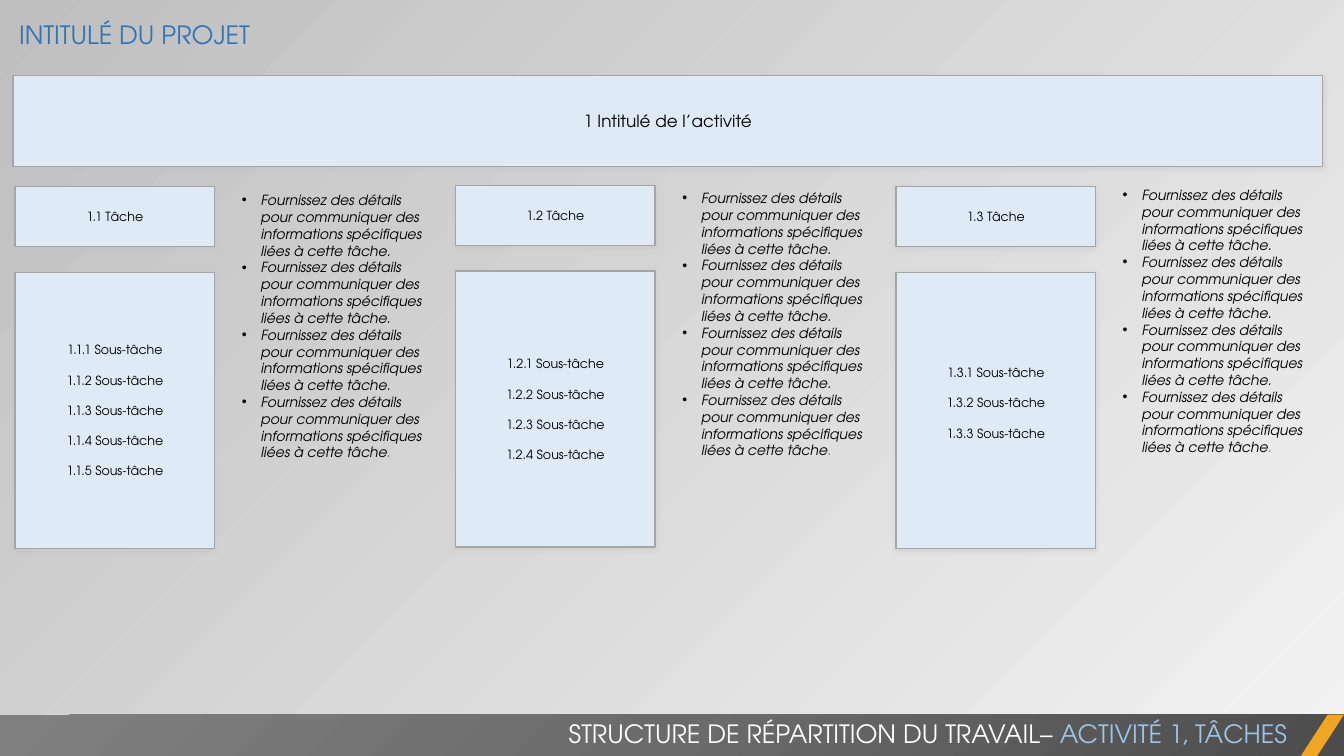
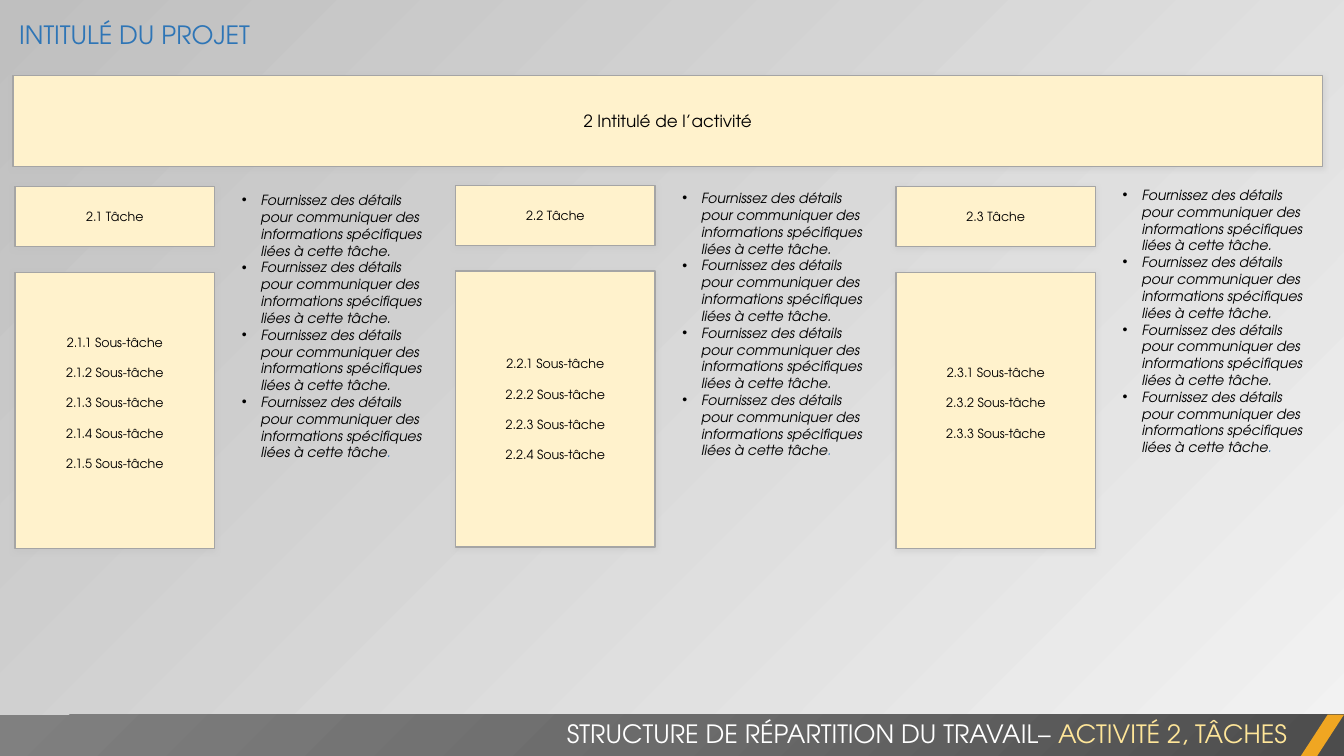
from pptx import Presentation
from pptx.dml.color import RGBColor
from pptx.enum.shapes import MSO_SHAPE as Shape
from pptx.enum.text import MSO_ANCHOR as Anchor, MSO_AUTO_SIZE as AutoSize, PP_ALIGN as Align
from pptx.oxml import parse_xml
from pptx.oxml.ns import nsdecls
from pptx.util import Cm, Pt

FONT = "TeX Gyre Adventor"
BLACK = RGBColor(0x00, 0x00, 0x00)
WHITE = RGBColor(0xFF, 0xFF, 0xFF)
BLUE = RGBColor(0x2E, 0x75, 0xB6)
SKY = RGBColor(0x9D, 0xC3, 0xE6)
PALE_BLUE = RGBColor(0xDE, 0xEB, 0xF7)
GOLD = RGBColor(0xFF, 0xE6, 0x99)
PALE_YELLOW = RGBColor(0xFF, 0xF2, 0xCC)
ORANGE = RGBColor(0xF0, 0xA6, 0x22)
BORDER = RGBColor(0xA5, 0xA5, 0xA5)
SILVER = RGBColor(0xBF, 0xBF, 0xBF)
MIST = RGBColor(0xF2, 0xF2, 0xF2)
BAND_DARK = RGBColor(0x4C, 0x4C, 0x4C)
BAND_MID = RGBColor(0x6B, 0x6B, 0x6B)
BAND_LIGHT = RGBColor(0x80, 0x80, 0x80)

PAGE_WIDTH, PAGE_HEIGHT = 33.87, 19.05
BAND_TOP, BAND_HEIGHT = 18.01, 1.06
COLUMN_LEFT, COLUMN_STEP = 0.38, 11.1
BOX_WIDTH, TASK_HEIGHT, SUBTASK_HEIGHT = 5.03, 1.52, 6.96
SUBTASK_DROP, DETAIL_SHIFT = 2.16, 5.46
TASK_TOPS = (4.7, 4.67, 4.7)
DETAIL_TOPS = (4.7, 4.65, 4.57)
DETAIL_IDS = (2, 3, 4)
HEADING_ID = 1
LINE_GAP = Pt(10.8)
DETAIL = "Fournissez des détails pour communiquer des informations spécifiques liées à cette tâche"

ACTIVITIES = (
    (PALE_BLUE, SKY, ((5, False), (4, False), (3, True))),
    (PALE_YELLOW, GOLD, ((5, True), (4, False), (3, True))),
)


def set_gradient(owner, stops, direction):
    marks = "".join(
        f'<a:gs pos="{place * 1000}"><a:srgbClr val="{color}">'
        f'<a:alpha val="{alpha * 1000}"/></a:srgbClr></a:gs>'
        for place, color, alpha in stops
    )
    gradient = owner.element.xpath(".//a:gradFill")[0]
    gradient.getparent().replace(gradient, parse_xml(
        f'<a:gradFill {nsdecls("a")} rotWithShape="1">'
        f"<a:gsLst>{marks}</a:gsLst>{direction}</a:gradFill>"
    ))


class WorkBreakdown:
    def __init__(self):
        self.deck = Presentation()
        self.deck.slide_width = Cm(PAGE_WIDTH)
        self.deck.slide_height = Cm(PAGE_HEIGHT)
        self.layout = self.deck.slide_layouts.get_by_name("Comparison")
        self.page = None

    def add_page(self):
        self.page = self.deck.slides.add_slide(self.layout)

    def add_frame(self):
        self.layout.background.fill.gradient()
        set_gradient(self.layout, ((0, MIST, 40), (100, SILVER, 100)),
                     '<a:lin ang="13500000" scaled="0"/>')
        band = self.block(Shape.RECTANGLE, 0, BAND_TOP, PAGE_WIDTH, BAND_HEIGHT)
        band.fill.gradient()
        set_gradient(band, ((0, BAND_DARK, 100), (50, BAND_MID, 100), (100, BAND_LIGHT, 100)),
                     '<a:path path="circle"><a:fillToRect l="100000" t="100000"/></a:path>')
        accent = self.block(Shape.PARALLELOGRAM, 32.77, BAND_TOP, 1.1, BAND_HEIGHT, ORANGE)
        accent.adjustments[0] = 0.65
        for number, part in enumerate((band, accent), 101):
            part.element.nvSpPr.cNvPr.set("id", str(number))
            self.layout.shapes.element.append(part.element)

    def block(self, kind, left, top, width, height, color=None):
        shape = self.page.shapes.add_shape(kind, Cm(left), Cm(top), Cm(width), Cm(height))
        shape.shadow.inherit = False
        shape.line.fill.background()
        if color is not None:
            shape.fill.solid()
            shape.fill.fore_color.rgb = color
        return shape

    def add_span(self, para, text, size, color=BLACK, italic=False):
        span = para.add_run()
        span.text = text
        span.font.name = FONT
        span.font.size = Pt(size)
        span.font.bold = False
        span.font.italic = italic
        span.font.color.rgb = color

    def box(self, left, top, width, height, color, lines, size, raised=False):
        box = self.block(Shape.RECTANGLE, left, top, width, height, color)
        box.line.color.rgb = BORDER
        box.line.width = Pt(1)
        box.element.xpath(".//a:effectLst")[0].append(parse_xml(
            f'<a:outerShdw {nsdecls("a")} blurRad="{Pt(4)}" dist="{Pt(1)}" dir="5400000">'
            f'<a:srgbClr val="{SILVER}"><a:alpha val="40000"/></a:srgbClr></a:outerShdw>'
        ))
        frame = box.text_frame
        frame.word_wrap = True
        frame.vertical_anchor = Anchor.MIDDLE
        if raised:
            frame.margin_bottom += LINE_GAP
        for index, line in enumerate(lines):
            para = frame.add_paragraph() if index else frame.paragraphs[0]
            para.alignment = Align.CENTER
            para.space_before = LINE_GAP if index else Pt(0)
            self.add_span(para, line, size)

    def placeholder(self, key, left, top, width, height):
        holder = self.page.placeholders[key]
        holder.left, holder.top = Cm(left), Cm(top)
        holder.width, holder.height = Cm(width), Cm(height)
        frame = holder.text_frame
        frame.word_wrap = True
        frame.auto_size = AutoSize.SHAPE_TO_FIT_TEXT
        frame.vertical_anchor = Anchor.TOP
        return frame

    def style_para(self, para, align, bullet=False):
        para.alignment = align
        para.space_before = Pt(0)
        properties = para._p.get_or_add_pPr()
        indent = Cm(0.48) if bullet else 0
        properties.set("marL", str(indent))
        properties.set("indent", str(-indent))
        marks = ('buFont typeface="Arial"', 'buChar char="•"') if bullet else ("buNone",)
        for mark in marks:
            properties.append(parse_xml(f'<a:{mark} {nsdecls("a")}/>'))

    def title(self, text):
        para = self.placeholder(0, 0.23, 0.36, 25.68, 1.02).paragraphs[0]
        self.style_para(para, Align.LEFT)
        self.add_span(para, text, 18, BLUE)

    def heading(self, text, highlight, color):
        para = self.placeholder(HEADING_ID, 4.32, 17.98, 28.37, 1.02).paragraphs[0]
        self.style_para(para, Align.RIGHT)
        self.add_span(para, text, 18, WHITE)
        self.add_span(para, highlight, 18, color)

    def details(self, key, left, top):
        frame = self.placeholder(key, left, top, 5.23, 7.62)
        for index in range(4):
            para = frame.add_paragraph() if index else frame.paragraphs[0]
            self.style_para(para, Align.LEFT, bullet=True)
            self.add_span(para, DETAIL, 10, italic=True)
            self.add_span(para, ".", 10, BLUE if index == 3 else BLACK, italic=True)

    def task(self, column, name, count, raised, color):
        left = COLUMN_LEFT + column * COLUMN_STEP
        top = TASK_TOPS[column]
        self.box(left, top, BOX_WIDTH, TASK_HEIGHT, color, [f"{name} Tâche"], 9)
        subtasks = [f"{name}.{number} Sous-tâche" for number in range(1, count + 1)]
        self.box(left, top + SUBTASK_DROP, BOX_WIDTH, SUBTASK_HEIGHT, color, subtasks, 9, raised)
        self.details(DETAIL_IDS[column], left + DETAIL_SHIFT, DETAIL_TOPS[column])


def main():
    plan = WorkBreakdown()
    for number, (fill, highlight, tasks) in enumerate(ACTIVITIES, 1):
        plan.add_page()
        if number == 1:
            plan.add_frame()
        plan.title("INTITULÉ DU PROJET")
        plan.heading("STRUCTURE DE RÉPARTITION DU TRAVAIL– ", f"ACTIVITÉ {number}, TÂCHES", highlight)
        plan.box(0.33, 1.9, 33, 2.29, fill, [f"{number} Intitulé de l’activité"], 12)
        for column, (count, raised) in enumerate(tasks):
            plan.task(column, f"{number}.{column + 1}", count, raised, fill)
    plan.deck.save("out.pptx")


if __name__ == "__main__":
    main()
